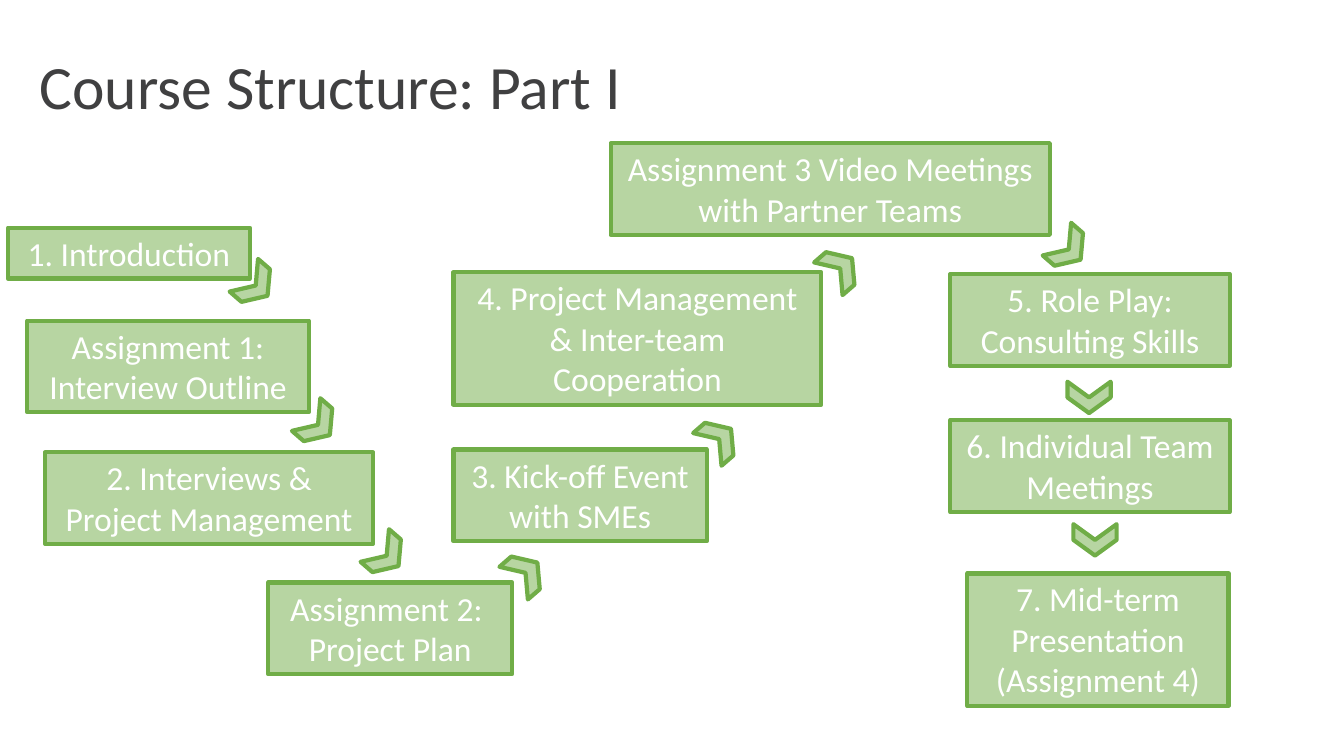
from lxml.etree import SubElement
from pptx import Presentation
from pptx.dml.color import RGBColor
from pptx.enum.shapes import MSO_SHAPE
from pptx.enum.text import MSO_ANCHOR, MSO_AUTO_SIZE, PP_ALIGN
from pptx.oxml.ns import qn
from pptx.util import Cm, Pt

GREEN = RGBColor(0x70, 0xAD, 0x47)
WHITE = RGBColor(0xFF, 0xFF, 0xFF)
CHARCOAL = RGBColor(0x40, 0x40, 0x41)
FONT = "Calibri"

LINE_HEIGHT = 1.03
BOX_PADDING = 0.25
CHEVRON_WIDTH, CHEVRON_HEIGHT = 0.79, 1.09
DOWN_RIGHT, UP_RIGHT, DOWN = 41, 319, 90

PREPARATION_STEPS = [
    ("1. Introduction", 0, 0, 6.1, 1),
    ("Assignment 1: Interview Outline", 0.49, 2.34, 7.09, 2),
    ("2. Interviews & Project Management", 0.94, 5.66, 8.26, 2),
    ("Assignment 2: \nProject Plan", 6.56, 8.94, 6.15, 2),
]
PREPARATION_CHEVRONS = [
    (5.85, 0.91, DOWN_RIGHT),
    (7.42, 4.42, DOWN_RIGHT),
    (9.15, 7.72, DOWN_RIGHT),
]
COOPERATION_STEPS = [
    ("3. Kick-off Event with SMEs", 0, 7.72, 6.38, 2),
    ("4. Project Management & Inter-team Cooperation", 0, 3.25, 9.27, 3),
    ("Assignment 3 Video Meetings with Partner Teams", 3.96, 0, 11.07, 2),
]
COOPERATION_CHEVRONS = [
    (1.42, 10.28, UP_RIGHT),
    (6.3, 6.91, UP_RIGHT),
    (9.35, 2.61, UP_RIGHT),
]
CONSULTING_STEPS = [
    ("5. Role Play: Consulting Skills", 0, 1.17, 7.04, 2),
    ("6. Individual Team Meetings", 0, 4.85, 7.04, 2),
    ("7. Mid-term Presentation (Assignment 4)", 0.43, 8.71, 6.58, 3),
]
CONSULTING_CHEVRONS = [
    (2.59, 0, DOWN_RIGHT),
    (3.1, 3.73, DOWN),
    (3.25, 7.32, DOWN),
]


def add_green_shape(slide, preset, left, top, width, height):
    shape = slide.shapes.add_shape(preset, left, top, width, height)
    shape.shadow.inherit = False
    shape.fill.solid()
    shape.fill.fore_color.rgb = GREEN
    tint = shape.fill._xPr.find(qn("a:solidFill"))[0]
    SubElement(tint, qn("a:alpha"), val="50000")
    shape.line.color.rgb = GREEN
    shape.line.width = Pt(3)
    return shape


def add_title(slide, left, top, width, height):
    title = slide.shapes.title
    title.left, title.top, title.width, title.height = left, top, width, height
    frame = title.text_frame
    frame.text = "Course Structure: Part I"
    frame.auto_size = MSO_AUTO_SIZE.NONE
    frame.vertical_anchor = MSO_ANCHOR.MIDDLE
    heading = frame.paragraphs[0]
    heading.alignment = PP_ALIGN.LEFT
    heading.line_spacing = 0.9
    heading.font.name = FONT
    heading.font.size = Pt(44)
    heading.font.color.rgb = CHARCOAL


def add_step(slide, left, top, width, height, wording):
    step = add_green_shape(slide, MSO_SHAPE.RECTANGLE, left, top, width, height)
    frame = step.text_frame
    frame.text = wording
    frame.word_wrap = True
    frame.auto_size = MSO_AUTO_SIZE.SHAPE_TO_FIT_TEXT
    frame.vertical_anchor = MSO_ANCHOR.TOP
    for paragraph in frame.paragraphs:
        paragraph.alignment = PP_ALIGN.CENTER
        paragraph.font.name = FONT
        paragraph.font.size = Pt(24)
        paragraph.font.color.rgb = WHITE


def add_stage(slide, left, top, steps, chevrons):
    for wording, across, down, width, lines in steps:
        add_step(slide, left + Cm(across), top + Cm(down), Cm(width),
                 Cm(BOX_PADDING + lines * LINE_HEIGHT), wording)
    for across, down, angle in chevrons:
        chevron = add_green_shape(slide, MSO_SHAPE.CHEVRON,
                                  left + Cm(across), top + Cm(down),
                                  Cm(CHEVRON_WIDTH), Cm(CHEVRON_HEIGHT))
        chevron.rotation = angle


def main():
    presentation = Presentation()
    presentation.slide_width = Cm(33.87)
    presentation.slide_height = Cm(19.05)
    slide = presentation.slides.add_slide(presentation.slide_layouts[5])
    add_title(slide, Cm(0.74), Cm(0.41), Cm(29.21), Cm(3.68))
    add_stage(slide, Cm(0.2), Cm(5.74), PREPARATION_STEPS, PREPARATION_CHEVRONS)
    add_stage(slide, Cm(11.43), Cm(3.61), COOPERATION_STEPS, COOPERATION_CHEVRONS)
    add_stage(slide, Cm(23.95), Cm(5.74), CONSULTING_STEPS, CONSULTING_CHEVRONS)
    presentation.save("out.pptx")


if __name__ == "__main__":
    main()
